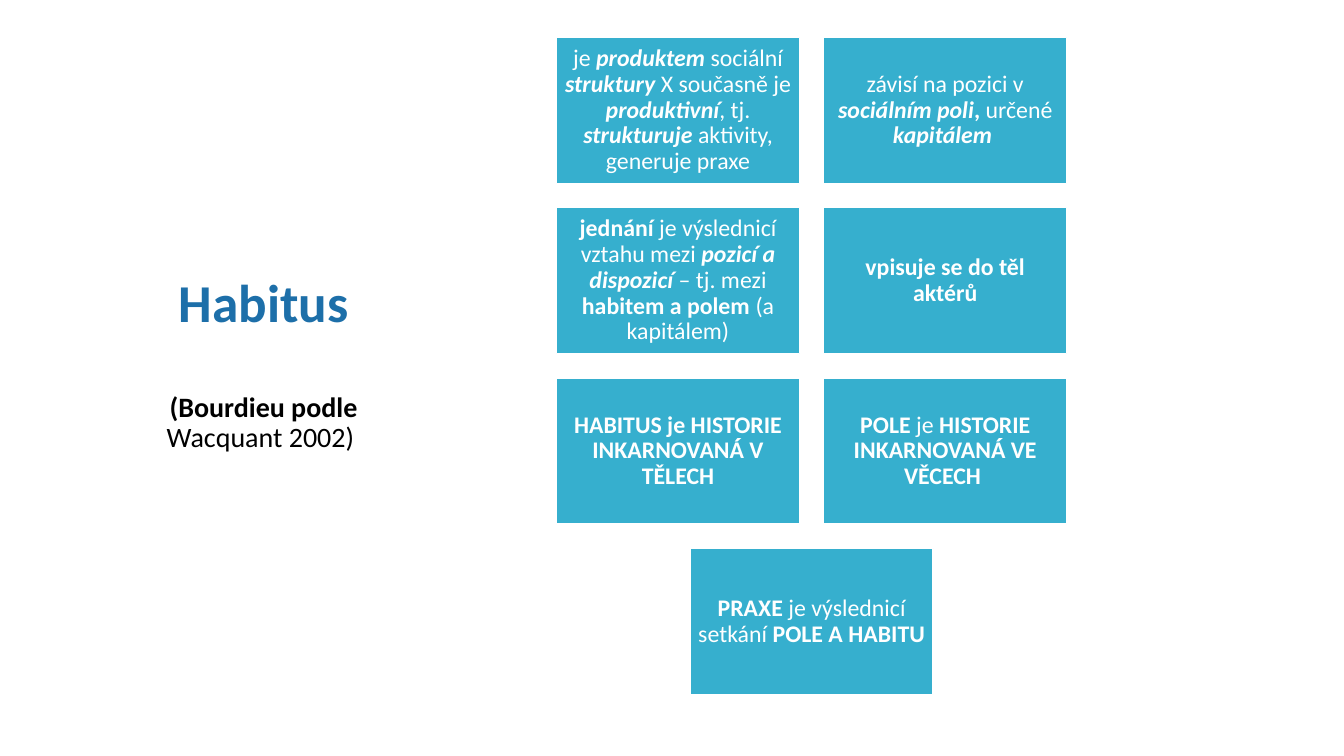
from pptx import Presentation
from pptx import util as u
from pptx.dml.color import RGBColor
from pptx.enum import shapes, text

BLUE = RGBColor(0x1D, 0x6F, 0xA9)
TEAL = RGBColor(0x36, 0xAF, 0xCE)
WHITE = RGBColor(0xFF, 0xFF, 0xFF)
BLACK = RGBColor(0x00, 0x00, 0x00)


def add_spans(para, spans, size, color):
    """Fill a centred paragraph; a style holds "b" for bold, "i" for italic."""
    para.alignment = text.PP_ALIGN.CENTER
    para.line_spacing = 0.9
    para.font.name = "Calibri"
    para.font.size = u.Pt(size)
    para.font.color.rgb = color
    for style, words in spans:
        span = para.add_run()
        span.text = words
        span.font.bold = "b" in style
        span.font.italic = "i" in style


deck = Presentation()
deck.slide_width = u.Inches(13.33)
deck.slide_height = u.Inches(7.5)
page = deck.slides.add_slide(deck.slide_layouts[6])

# Title with its source below
title = page.shapes.add_textbox(u.Inches(1.23), u.Inches(0.58), u.Inches(2.77), u.Inches(6.09))
frame = title.text_frame
frame.word_wrap = True
frame.vertical_anchor = text.MSO_ANCHOR.MIDDLE
add_spans(frame.paragraphs[0], [("b", "Habitus")], 38, BLUE)
citation = frame.add_paragraph()
citation.space_before = u.Pt(42)
add_spans(citation, [("b", "(Bourdieu podle "), ("", "Wacquant 2002) ")], 20, BLACK)

# Statements, in reading order
statements = [
    [("", "je "), ("bi", "produktem "), ("", "sociální "), ("bi", "struktury "),
     ("", "X současně je "), ("bi", "produktivní"), ("", ", tj. "),
     ("bi", "strukturuje "), ("", "aktivity, generuje praxe")],
    [("", "závisí na pozici v "), ("bi", "sociálním poli"), ("b", ", "),
     ("", "určené "), ("bi", "kapitálem ")],
    [("b", "jednání"), ("", " je výslednicí vztahu mezi "), ("bi", "pozicí a dispozicí "),
     ("", "– tj. mezi "), ("b", "habitem a polem "), ("", "(a kapitálem)")],
    [("b", "vpisuje se do těl aktérů")],
    [("b", "HABITUS je HISTORIE INKARNOVANÁ V TĚLECH")],
    [("b", "POLE"), ("", " je "), ("b", "HISTORIE INKARNOVANÁ VE VĚCECH ")],
    [("b", "PRAXE "), ("", "je výslednicí setkání "), ("b", "POLE A HABITU")],
]

# Two-column grid, the last box centred below it
LEFT, TOP = 5.52, 0.37
COLUMN_STEP, ROW_STEP = 2.65, 1.69
for index, spans in enumerate(statements):
    row, column = divmod(index, 2)
    if index == len(statements) - 1:
        column = 0.5
    box = page.shapes.add_shape(
        shapes.MSO_SHAPE.RECTANGLE,
        u.Inches(LEFT + column * COLUMN_STEP), u.Inches(TOP + row * ROW_STEP),
        u.Inches(2.41), u.Inches(1.45))
    box.shadow.inherit = False
    box.fill.solid()
    box.fill.fore_color.rgb = TEAL
    box.line.color.rgb = WHITE
    box.line.width = u.Pt(1)
    frame = box.text_frame
    frame.word_wrap = True
    frame.vertical_anchor = text.MSO_ANCHOR.MIDDLE
    frame.margin_left = frame.margin_right = u.Inches(0.07)
    frame.margin_top = frame.margin_bottom = u.Inches(0.07)
    add_spans(frame.paragraphs[0], spans, 17, WHITE)

deck.save("out.pptx")
